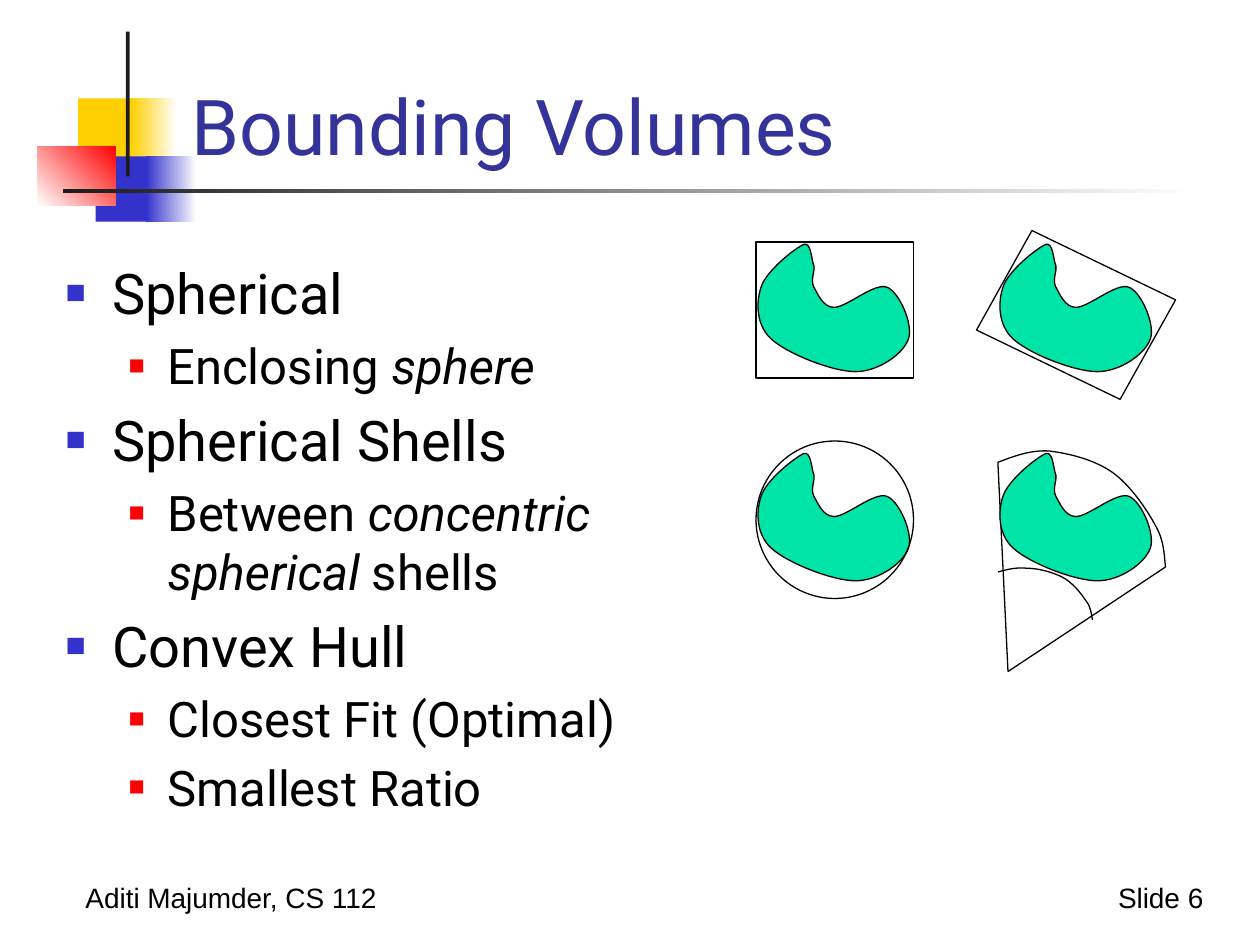
from dataclasses import dataclass
from typing import Optional

import pptx
import pptx.dml.color
import pptx.enum.shapes
import pptx.enum.text
import pptx.oxml.ns
import pptx.util
from lxml import etree

RGBColor = pptx.dml.color.RGBColor
Inches = pptx.util.Inches
Pt = pptx.util.Pt
SHAPE = pptx.enum.shapes.MSO_SHAPE
ALIGN = pptx.enum.text.PP_ALIGN
qn = pptx.oxml.ns.qn

BLACK = RGBColor(0x00, 0x00, 0x00)
WHITE = RGBColor(0xFF, 0xFF, 0xFF)
YELLOW = RGBColor(0xFF, 0xCF, 0x01)
BLUE = RGBColor(0x33, 0x33, 0xCC)
RED = RGBColor(0xFF, 0x00, 0x00)
CHARCOAL = RGBColor(0x1C, 0x1C, 0x1C)
NAVY = RGBColor(0x33, 0x33, 0x99)
GREEN = RGBColor(0x00, 0xE4, 0xA8)

Point = tuple[float, float]


@dataclass
class Block:
    left: float
    top: float
    width: float
    height: float
    color: RGBColor
    end: Optional[RGBColor] = None
    angle: float = 0


@dataclass
class Level:
    size: int
    margin: float
    hang: float
    bullet_color: RGBColor
    bullet_pct: int


@dataclass
class Item:
    level: int
    runs: list[tuple[str, bool]]


@dataclass
class Footer:
    left: float
    width: float
    text: str
    align: ALIGN


BLOCKS = [
    Block(0.62, 0.78, 0.48, 0.52, YELLOW),
    Block(1.04, 0.78, 0.36, 0.52, YELLOW, WHITE),
    Block(0.76, 1.24, 0.46, 0.52, BLUE),
    Block(1.16, 1.24, 0.4, 0.52, BLUE, WHITE),
    Block(0.3, 1.16, 0.62, 0.47, WHITE, RED, 45),
    Block(1, 0.25, 0.03, 1.15, CHARCOAL),
    Block(0.5, 1.5, 9, 0.03, CHARCOAL, WHITE),
]
LEVELS = [Level(32, 0.37, 0.37, BLUE, 60), Level(28, 0.81, 0.31, RED, 55)]
ITEMS = [
    Item(0, [("Spherical", False)]),
    Item(1, [("Enclosing ", False), ("sphere", True)]),
    Item(0, [("Spherical Shells", False)]),
    Item(1, [("Between ", False), ("concentric spherical", True), (" shells", False)]),
    Item(0, [("Convex Hull", False)]),
    Item(1, [("Closest Fit (Optimal)", False)]),
    Item(1, [("Smallest Ratio", False)]),
]
FOOTERS = [
    Footer(0.58, 2.55, "Aditi Majumder, CS 112", ALIGN.LEFT),
    Footer(8.62, 1.03, "Slide 6", ALIGN.RIGHT),
]

COLUMNS = (6, 7.92)
ROWS = (1.92, 3.58)
BLOB = [
    (0.38, 0.02), (0.31, 0.05), (0.08, 0.23), (0.04, 0.36),
    (0, 0.48), (0, 0.66), (0.12, 0.77), (0.25, 0.89), (0.61, 1.03), (0.79, 1.03),
    (0.97, 1.03), (1.17, 0.89), (1.21, 0.77), (1.25, 0.66), (1.14, 0.4), (1.04, 0.36),
    (0.94, 0.32), (0.72, 0.52), (0.62, 0.52), (0.53, 0.52), (0.49, 0.41), (0.46, 0.36),
    (0.43, 0.3), (0.47, 0.23), (0.46, 0.19), (0.44, 0.15), (0.44, 0), (0.38, 0.02),
]
TILTED_BOX = [(7.75, 2.62), (8.19, 1.83), (9.33, 2.38), (8.89, 3.17)]
OUTER_ARC = [
    (7.92, 3.67), (8.05, 3.62), (8.18, 3.57), (8.33, 3.58), (8.49, 3.6), (8.69, 3.65),
    (8.83, 3.75), (8.97, 3.85), (9.1, 4.04), (9.17, 4.17), (9.24, 4.29), (9.24, 4.4), (9.25, 4.5),
]
INNER_ARC = [
    (7.92, 4.54), (7.99, 4.52), (8.07, 4.5), (8.15, 4.51), (8.24, 4.51), (8.35, 4.54),
    (8.43, 4.58), (8.51, 4.62), (8.58, 4.71), (8.62, 4.77), (8.66, 4.82), (8.66, 4.87), (8.67, 4.92),
]
APEX = (8, 5.33)


def style_font(r, size: int, font: str, color: RGBColor) -> None:
    r.font.size = Pt(size)
    r.font.name = font
    r.font.color.rgb = color


def outline(sp, fill: Optional[RGBColor] = None) -> None:
    sp.shadow.inherit = False
    if fill is None:
        sp.fill.background()
    else:
        sp.fill.solid()
        sp.fill.fore_color.rgb = fill
    sp.line.color.rgb = BLACK
    sp.line.width = Pt(0.75)


def add_block(s, b: Block) -> None:
    sp = s.shapes.add_shape(SHAPE.RECTANGLE, *map(Inches, (b.left, b.top, b.width, b.height)))
    sp.shadow.inherit = False
    sp.line.fill.background()
    if b.end is None:
        sp.fill.solid()
        sp.fill.fore_color.rgb = b.color
        return
    sp.fill.gradient()
    sp.fill.gradient_angle = b.angle
    for stop, color, position in zip(sp.fill.gradient_stops, (b.color, b.end), (0, 1)):
        stop.color.rgb = color
        stop.position = position


def add_footer(s, f: Footer) -> None:
    tf = s.shapes.add_textbox(*map(Inches, (f.left, 6.94, f.width, 0.37))).text_frame
    tf.word_wrap = False
    tf.auto_size = pptx.enum.text.MSO_AUTO_SIZE.SHAPE_TO_FIT_TEXT
    tf.text = f.text
    p = tf.paragraphs[0]
    p.alignment = f.align
    style_font(p.runs[0], 16, "Arial", BLACK)


def add_item(p, item: Item) -> None:
    level = LEVELS[item.level]
    p.level = item.level
    pPr = p._p.get_or_add_pPr()
    pPr.set("marL", str(Inches(level.margin)))
    pPr.set("indent", str(-Inches(level.hang)))
    color = etree.SubElement(pPr, qn("a:buClr"))
    etree.SubElement(color, qn("a:srgbClr"), val=str(level.bullet_color))
    etree.SubElement(pPr, qn("a:buSzPct"), val=str(level.bullet_pct * 1000))
    etree.SubElement(pPr, qn("a:buFont"), typeface="Arial")
    etree.SubElement(pPr, qn("a:buChar"), char="■")
    for text, italic in item.runs:
        r = p.add_run()
        r.text = text
        style_font(r, level.size, "Roboto", BLACK)
        r.font.italic = italic


def add_path(s, points: list[Point], close: bool, fill: Optional[RGBColor] = None):
    emu = [(Inches(x), Inches(y)) for x, y in points]
    builder = s.shapes.build_freeform(*emu[0])
    builder.add_line_segments(emu[1:], close=close)
    sp = builder.convert_to_shape()
    outline(sp, fill)
    return sp


def add_curve(s, points: list[Point], close: bool, fill: Optional[RGBColor] = None) -> None:
    sp = add_path(s, points, close, fill)
    lines = list(sp._element.iter(qn("a:lnTo")))[:len(points) - 1]
    for i in range(0, len(lines), 3):
        bezier = etree.Element(qn("a:cubicBezTo"))
        lines[i].addprevious(bezier)
        for line in lines[i:i + 3]:
            bezier.append(line[0])
            line.getparent().remove(line)


def add_blob(s, left: float, top: float) -> None:
    add_curve(s, [(left + x, top + y) for x, y in BLOB], True, GREEN)


def add_bound(s, kind: SHAPE, top: float, height: float) -> None:
    outline(s.shapes.add_shape(kind, *map(Inches, (COLUMNS[0], top, 1.25, height))))


def add_edge(s, start: Point, end: Point) -> None:
    line = s.shapes.add_connector(
        pptx.enum.shapes.MSO_CONNECTOR.STRAIGHT, *map(Inches, (*start, *end)))
    line.line.color.rgb = BLACK
    line.line.width = Pt(0.75)
    etree.SubElement(line._element.spPr, qn("a:effectLst"))


def place(sp, left: float, top: float, width: float, height: float):
    sp.element.getparent().append(sp.element)
    sp.left, sp.top, sp.width, sp.height = map(Inches, (left, top, width, height))
    tf = sp.text_frame
    tf.word_wrap = True
    tf.auto_size = pptx.enum.text.MSO_AUTO_SIZE.NONE
    return tf


def main() -> None:
    prs = pptx.Presentation()
    prs.slide_width, prs.slide_height = Inches(10), Inches(7.5)
    s = prs.slides.add_slide(prs.slide_layouts[1])
    title, body = s.shapes.title, s.placeholders[1]
    for block in BLOCKS:
        add_block(s, block)
    for footer in FOOTERS:
        add_footer(s, footer)

    tf = place(title, 1.42, 0.25, 8.36, 1.16)
    tf.vertical_anchor = pptx.enum.text.MSO_ANCHOR.BOTTOM
    tf.text = "Bounding Volumes"
    tf.paragraphs[0].alignment = ALIGN.LEFT
    style_font(tf.paragraphs[0].runs[0], 44, "Roboto", NAVY)

    tf = place(body, 0.42, 2, 5.08, 4.83)
    for i, item in enumerate(ITEMS):
        add_item(tf.add_paragraph() if i else tf.paragraphs[0], item)

    add_blob(s, COLUMNS[0], ROWS[0])
    add_bound(s, SHAPE.RECTANGLE, 1.92, 1.08)
    add_blob(s, COLUMNS[1], ROWS[0])
    add_path(s, TILTED_BOX, True)
    add_blob(s, COLUMNS[0], ROWS[1])
    add_bound(s, SHAPE.OVAL, 3.5, 1.25)
    for arc in (OUTER_ARC, INNER_ARC):
        add_curve(s, arc, False)
    add_edge(s, APEX, OUTER_ARC[-1])
    add_edge(s, OUTER_ARC[0], APEX)
    add_blob(s, COLUMNS[1], ROWS[1])
    prs.save("out.pptx")


if __name__ == "__main__":
    main()
